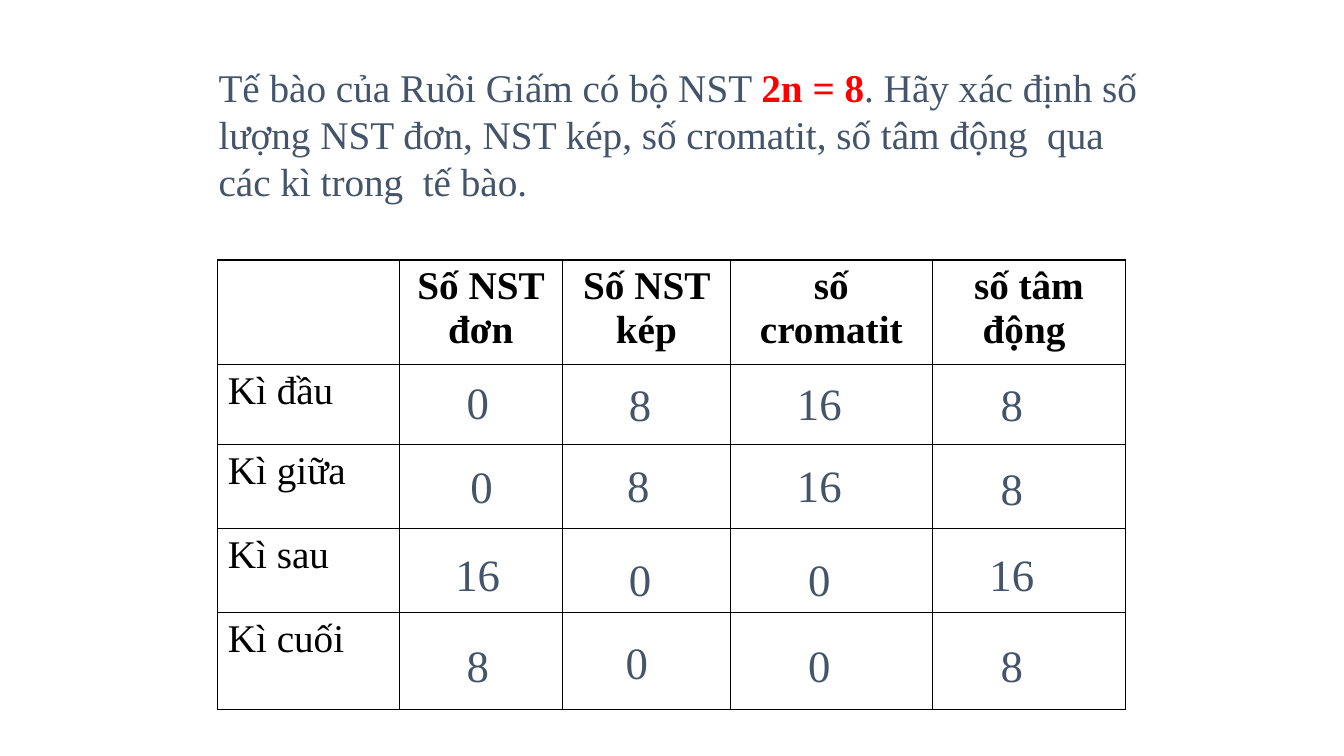
"""Build a slide with an exercise on fruit fly chromosome counts through mitosis."""
from lxml import etree
from pptx import Presentation
from pptx.dml.color import RGBColor
from pptx.enum.text import MSO_AUTO_SIZE, PP_ALIGN
from pptx.oxml.ns import qn
from pptx.util import Cm, Pt

LEFT, CENTER = PP_ALIGN.LEFT, PP_ALIGN.CENTER
GROW = MSO_AUTO_SIZE.SHAPE_TO_FIT_TEXT
SLATE = RGBColor(0x44, 0x54, 0x6A)
RED = RGBColor(0xFF, 0x00, 0x00)
BLACK = RGBColor(0x00, 0x00, 0x00)
WHITE = RGBColor(0xFF, 0xFF, 0xFF)
FONT = "Times New Roman"

QUESTION = [
    ("Tế bào của Ruồi Giấm có bộ NST ", SLATE, False),
    ("2n = 8", RED, True),
    (". Hãy xác định số lượng NST đơn, NST kép, số cromatit, "
     "số tâm động  qua các kì trong  tế bào.", SLATE, False),
]
HEADERS = ["", "Số NST đơn", "Số NST kép", "số cromatit", "số tâm động "]
PHASES = ["Kì đầu", "Kì giữa", "Kì sau", "Kì cuối"]
COL_WIDTHS = [4.57, 4.11, 4.24, 5.08, 4.88]
ROW_HEIGHTS = [2.62, 2.03, 2.11, 2.11, 2.46]
ANSWER_COLUMNS = [
    [("0", 10.87, 9.32), ("0", 10.97, 11.43), ("16", 10.87, 13.64), ("8", 10.87, 15.95)],
    [("8", 14.96, 9.37), ("8", 14.92, 11.41), ("0", 14.96, 13.77), ("0", 14.88, 15.88)],
    [("16", 19.48, 9.35), ("16", 19.48, 11.4), ("0", 19.48, 13.77), ("0", 19.48, 15.95)],
    [("8", 24.33, 9.37), ("8", 24.33, 11.48), ("16", 24.33, 13.64), ("8", 24.33, 15.95)],
]


def add_text(p, text, size=28, color=SLATE, bold=False, align=LEFT):
    p.alignment = align
    r = p.add_run()
    r.text = text
    r.font.name, r.font.size, r.font.bold = FONT, Pt(size), bold
    r.font.color.rgb = color


def add_box(s, left, top, width, height):
    tf = s.shapes.add_textbox(Cm(left), Cm(top), Cm(width), Cm(height)).text_frame
    tf.word_wrap = True
    tf.auto_size = GROW
    return tf.paragraphs[0]


def add_borders(cell):
    tc_pr = cell._tc.get_or_add_tcPr()
    for i, side in enumerate(("a:lnL", "a:lnR", "a:lnT", "a:lnB")):
        ln = etree.Element(qn(side), w=str(Pt(1)))
        fill = etree.SubElement(ln, qn("a:solidFill"))
        etree.SubElement(fill, qn("a:srgbClr"), val=str(BLACK))
        tc_pr.insert(i, ln)


def add_phase_table(s):
    rows = [HEADERS] + [[phase] + [""] * len(ANSWER_COLUMNS) for phase in PHASES]
    table = s.shapes.add_table(len(rows), len(HEADERS), Cm(5.49), Cm(6.55),
                               Cm(sum(COL_WIDTHS)), Cm(sum(ROW_HEIGHTS))).table
    for column, width in zip(table.columns, COL_WIDTHS):
        column.width = Cm(width)
    for i, (row, height) in enumerate(zip(rows, ROW_HEIGHTS)):
        table.rows[i].height = Cm(height)
        for j, text in enumerate(row):
            cell = table.cell(i, j)
            cell.fill.solid()
            cell.fill.fore_color.rgb = WHITE
            add_borders(cell)
            if text:
                add_text(cell.text_frame.paragraphs[0], text, color=BLACK,
                         bold=i == 0, align=LEFT if i else CENTER)


def main():
    prs = Presentation()
    prs.slide_width, prs.slide_height = Cm(33.87), Cm(19.05)
    s = prs.slides.add_slide(prs.slide_layouts[6])
    p = add_box(s, 5.26, 1.47, 23.7, 3.84)
    for text, color, bold in QUESTION:
        add_text(p, text, color=color, bold=bold)
    add_phase_table(s)
    for column in ANSWER_COLUMNS:
        for value, left, top in column:
            add_text(add_box(s, left, top, 2.34, 1.63), value, size=32, align=CENTER)
    prs.save("out.pptx")


if __name__ == "__main__":
    main()
